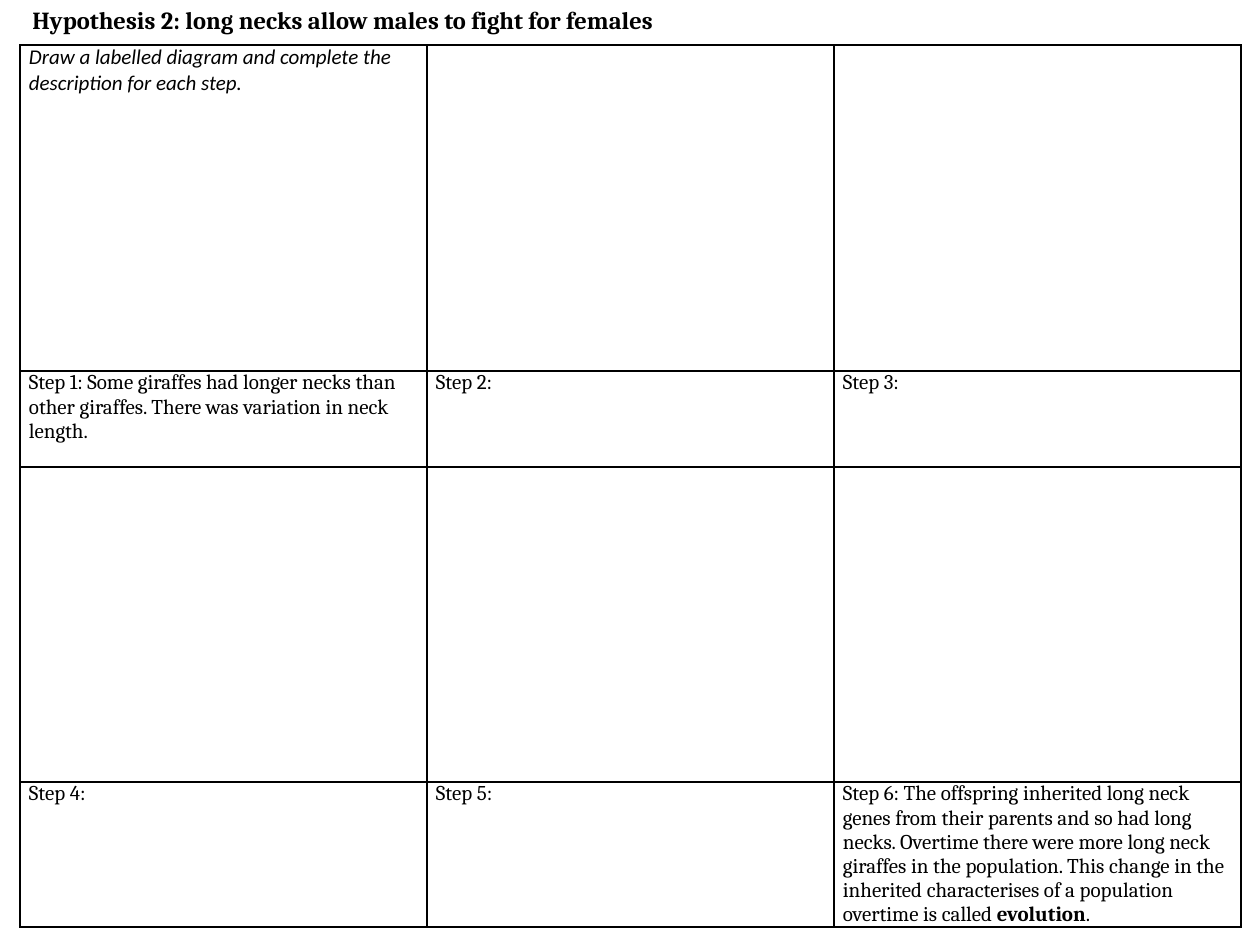
from dataclasses import dataclass

from lxml import etree
from pptx import Presentation
from pptx import util as u
from pptx.dml.color import RGBColor
from pptx.oxml import ns

PX = 914400 / 126


@dataclass(frozen=True)
class Theme:
    ink: str = "000000"
    heading_font: str = "Cambria"
    hint_font: str = "Calibri"
    title_size: int = 14
    body_size: int = 12
    border: float = 1


THEME = Theme()
COLUMN_WIDTH = 407
ROW_HEIGHTS = [326, 96, 315, 145]
HINT = "Draw a labelled diagram and complete the description for each step."
STEPS = [
    "Step 1: Some giraffes had longer necks than other giraffes. "
    "There was variation in neck length.",
    "Step 2:",
    "Step 3:",
    "Step 4:",
    "Step 5:",
    "Step 6: The offspring inherited long neck genes from their parents and so "
    "had long necks. Overtime there were more long neck giraffes in the "
    "population. This change in the inherited characterises of a population "
    "overtime is called ",
]


def px(length):
    return u.Emu(round(length * PX))


def add_text(paragraph, content, font=THEME.heading_font, size=THEME.body_size,
             bold=False, italic=False):
    run = paragraph.add_run()
    run.text = content
    run.font.name = font
    run.font.size = u.Pt(size)
    run.font.bold = bold
    run.font.italic = italic
    run.font.color.rgb = RGBColor.from_string(THEME.ink)


def add_title(slide, content):
    box = slide.shapes.add_textbox(px(20), px(-1), px(3 * COLUMN_WIDTH), px(43))
    box.text_frame.word_wrap = True
    add_text(box.text_frame.paragraphs[0], content, size=THEME.title_size, bold=True)


def style_cell(cell):
    cell.margin_left = cell.margin_right = px(9)
    cell.margin_top = cell.margin_bottom = 0
    properties = cell._tc.get_or_add_tcPr()
    for side in ("lnL", "lnR", "lnT", "lnB"):
        line = etree.SubElement(properties, ns.qn(f"a:{side}"),
                                w=str(u.Pt(THEME.border)))
        fill = etree.SubElement(line, ns.qn("a:solidFill"))
        etree.SubElement(fill, ns.qn("a:srgbClr"), val=THEME.ink)
    cell.fill.background()


def add_storyboard(slide):
    frame = slide.shapes.add_table(len(ROW_HEIGHTS), 3, px(20), px(45),
                                   px(3 * COLUMN_WIDTH), px(sum(ROW_HEIGHTS)))
    table = frame.table
    table.first_row = table.horz_banding = False
    for column in table.columns:
        column.width = px(COLUMN_WIDTH)
    for row, height in zip(table.rows, ROW_HEIGHTS):
        row.height = px(height)
    for cell in table.iter_cells():
        style_cell(cell)
    return table


def main():
    presentation = Presentation()
    presentation.slide_width = px(1260)
    presentation.slide_height = px(945)
    slide = presentation.slides.add_slide(presentation.slide_layouts[6])
    table = add_storyboard(slide)
    add_text(table.cell(0, 0).text_frame.paragraphs[0], HINT,
             font=THEME.hint_font, italic=True)
    for index, step in enumerate(STEPS):
        row, column = 1 + 2 * (index // 3), index % 3
        paragraph = table.cell(row, column).text_frame.paragraphs[0]
        add_text(paragraph, step)
    add_text(paragraph, "evolution", bold=True)
    add_text(paragraph, ".")
    add_title(slide, "Hypothesis 2: long necks allow males to fight for females")
    presentation.save("out.pptx")


if __name__ == "__main__":
    main()
